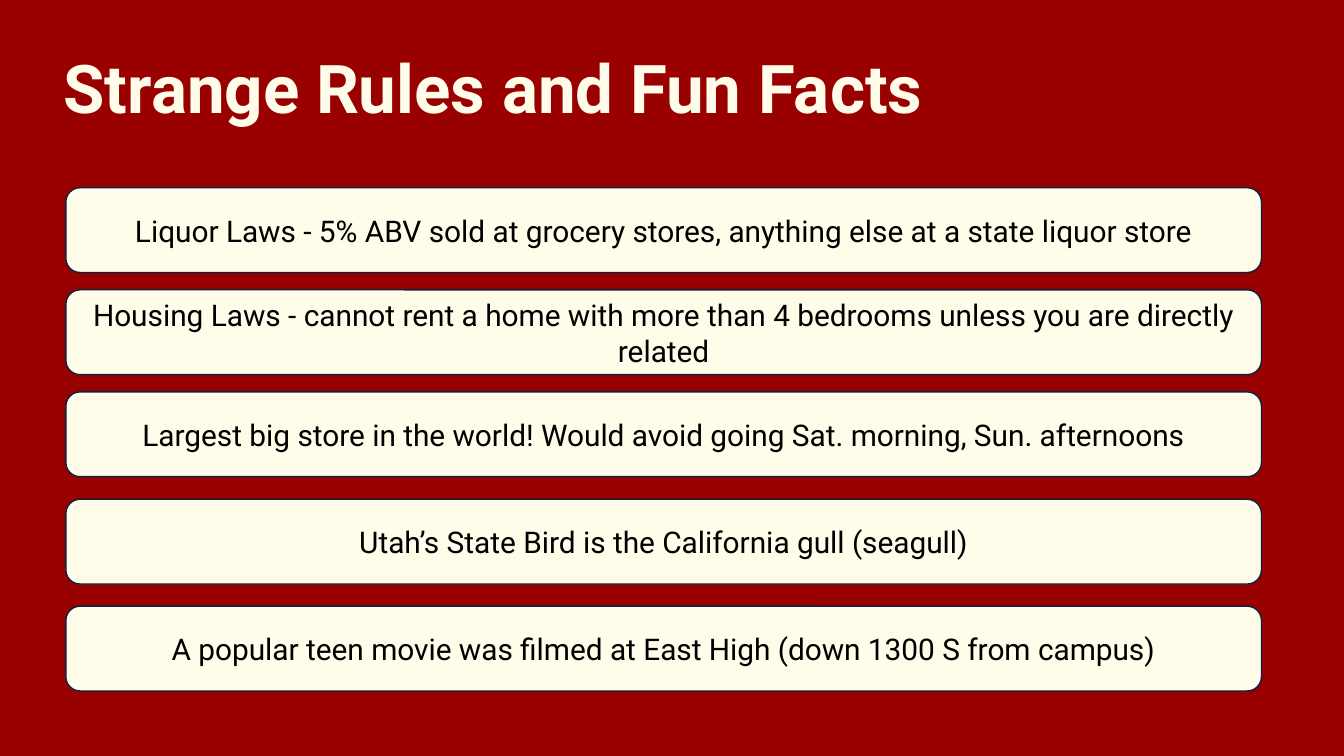
from dataclasses import dataclass

from pptx import Presentation
from pptx.dml.color import RGBColor
from pptx.enum.shapes import MSO_SHAPE
from pptx.enum.text import MSO_ANCHOR, PP_ALIGN
from pptx.util import Pt


@dataclass(frozen=True)
class Theme:
    background: RGBColor = RGBColor(0x99, 0x00, 0x00)
    cream: RGBColor = RGBColor(0xFF, 0xFC, 0xE9)
    outline: RGBColor = RGBColor(0x0B, 0x21, 0x3F)
    text: RGBColor = RGBColor(0x00, 0x00, 0x00)
    font: str = "Roboto"
    title_size: int = 36
    fact_size: int = 16


THEME = Theme()
INSET = 7.2
CARD_HEIGHT = 45.4
CARD_RADIUS = 0.167

# Each fact with the top of its card, in points below the top of the list
FACTS = [
    (0, "Liquor Laws - 5% ABV sold at grocery stores, anything else at a state liquor store"),
    (54.7, "Housing Laws - cannot rent a home with more than 4 bedrooms unless you are directly related"),
    (109.4, "Largest big store in the world! Would avoid going Sat. morning, Sun. afternoons"),
    (166.9, "Utah’s State Bird is the California gull (seagull)"),
    (224.2, "A popular teen movie was filmed at East High (down 1300 S from campus)"),
]


def write_text(shape, text, size, color, bold=False, alignment=PP_ALIGN.LEFT, anchor=MSO_ANCHOR.TOP):
    text_frame = shape.text_frame
    text_frame.word_wrap = True
    text_frame.vertical_anchor = anchor
    text_frame.margin_left = text_frame.margin_right = Pt(INSET)
    text_frame.margin_top = text_frame.margin_bottom = Pt(INSET)
    text_frame.text = text
    paragraph = text_frame.paragraphs[0]
    paragraph.alignment = alignment
    font = paragraph.runs[0].font
    font.name = THEME.font
    font.size = Pt(size)
    font.bold = bold
    font.color.rgb = color


def add_title(slide, text, left, top, width, height):
    title = slide.shapes.add_textbox(Pt(left), Pt(top), Pt(width), Pt(height))
    write_text(title, text, THEME.title_size, THEME.cream, bold=True)


def add_fact_cards(slide, facts, left, top, width):
    for offset, fact in facts:
        card = slide.shapes.add_shape(
            MSO_SHAPE.ROUNDED_RECTANGLE, Pt(left), Pt(top + offset), Pt(width), Pt(CARD_HEIGHT)
        )
        card.adjustments[0] = CARD_RADIUS
        card.shadow.inherit = False
        card.fill.solid()
        card.fill.fore_color.rgb = THEME.cream
        card.line.color.rgb = THEME.outline
        card.line.width = Pt(0.75)
        write_text(card, fact, THEME.fact_size, THEME.text,
                   alignment=PP_ALIGN.CENTER, anchor=MSO_ANCHOR.MIDDLE)


def main():
    presentation = Presentation()
    presentation.slide_width = Pt(720)
    presentation.slide_height = Pt(405)
    slide = presentation.slides.add_slide(presentation.slide_layouts[6])

    # Background
    slide.background.fill.solid()
    slide.background.fill.fore_color.rgb = THEME.background

    # Heading and list of facts
    add_title(slide, "Strange Rules and Fun Facts", left=27, top=17.6, width=541, height=57.6)
    add_fact_cards(slide, FACTS, left=35.3, top=100.6, width=640.5)

    presentation.save("out.pptx")


if __name__ == "__main__":
    main()
